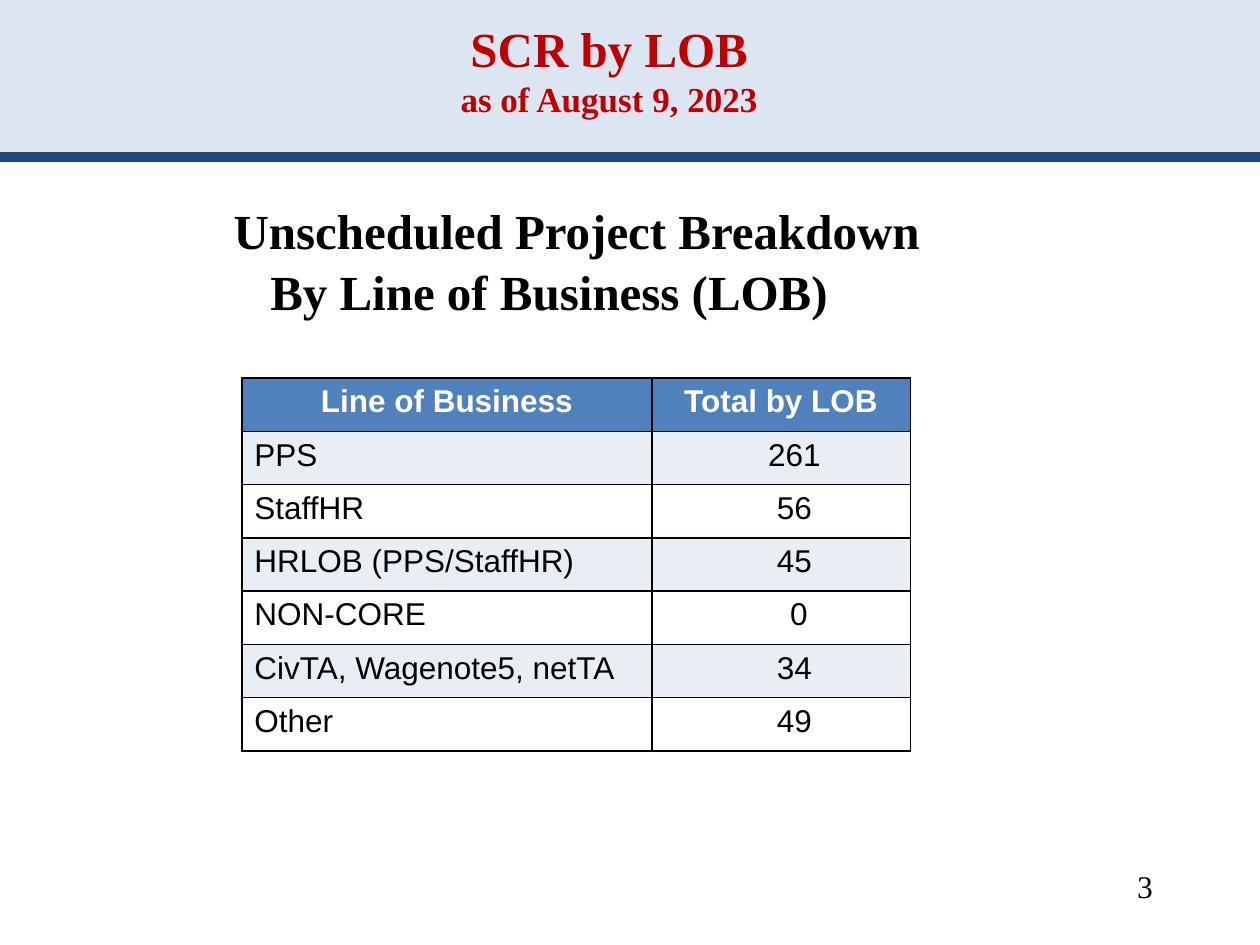
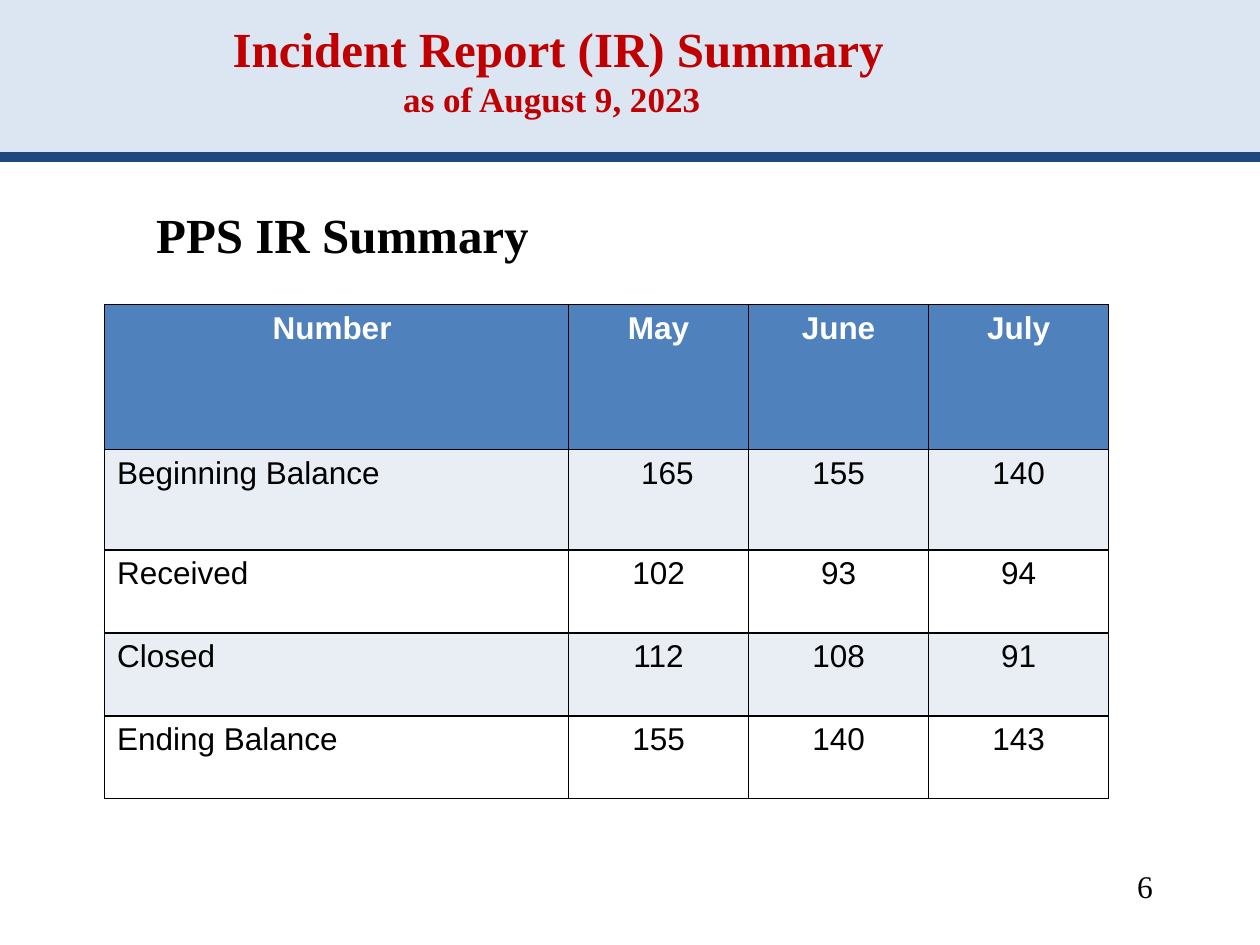
from dataclasses import dataclass

from lxml.etree import SubElement
from pptx import Presentation
from pptx.dml.color import RGBColor
from pptx.enum.shapes import MSO_CONNECTOR, MSO_SHAPE
from pptx.enum.text import MSO_ANCHOR, PP_ALIGN
from pptx.oxml.ns import qn
from pptx.slide import Slide
from pptx.table import _Cell
from pptx.text.text import _Paragraph
from pptx.util import Cm, Pt

PALE = RGBColor(0xDC, 0xE6, 0xF2)
NAVY = RGBColor(0x1F, 0x49, 0x7D)
RED = RGBColor(0xC0, 0x00, 0x00)
BLUE = RGBColor(0x4F, 0x81, 0xBD)
STRIPE = RGBColor(0xE9, 0xED, 0xF4)
WHITE = RGBColor(0xFF, 0xFF, 0xFF)
BLACK = RGBColor(0x00, 0x00, 0x00)

SERIF = "Times New Roman"
SANS = "Arial"
WIDTH, HEIGHT = 25.4, 19.05
PAD = 0.25
NUDGE = 0.18  # one step of sideways shift in a cell


@dataclass(frozen=True)
class Box:
    left: float
    top: float
    width: float
    height: float


@dataclass(frozen=True)
class Line:
    text: str
    size: int = 28
    indent: float = 0
    before: float = 0


@dataclass(frozen=True)
class Grid:
    left: float
    top: float
    cols: tuple[float, ...]
    rows: tuple[float, ...]
    cells: list[tuple[str, ...]]
    nudges: dict[tuple[int, int], int]


@dataclass(frozen=True)
class Page:
    number: int
    title: str
    title_box: Box
    title_indent: float
    heads: list[Line]
    head_box: Box
    grid: Grid


def add_run(para: _Paragraph, text: str, size: int, font: str,
            color: RGBColor, bold: bool) -> None:
    run = para.add_run()
    run.text = text
    run.font.size = Pt(size)
    run.font.name = font
    run.font.bold = bold
    run.font.color.rgb = color


def add_text(slide: Slide, box: Box, lines: list[Line], color: RGBColor = BLACK,
             bold: bool = True, align: PP_ALIGN = PP_ALIGN.LEFT,
             anchor: MSO_ANCHOR = MSO_ANCHOR.TOP) -> None:
    shape = slide.shapes.add_textbox(Cm(box.left), Cm(box.top),
                                     Cm(box.width), Cm(box.height))
    frame = shape.text_frame
    frame.word_wrap = True
    frame.vertical_anchor = anchor
    for i, line in enumerate(lines):
        para = frame.add_paragraph() if i else frame.paragraphs[0]
        para.alignment = align
        para.space_before = Pt(line.before)
        if line.indent:
            para._p.get_or_add_pPr().set("marL", str(Cm(line.indent)))
        add_run(para, line.text, line.size, SERIF, color, bold)


def add_band(slide: Slide) -> None:
    band = slide.shapes.add_shape(MSO_SHAPE.RECTANGLE, 0, 0, Cm(WIDTH), Cm(3.25))
    band.shadow.inherit = False
    band.fill.solid()
    band.fill.fore_color.rgb = PALE
    band.line.fill.background()
    rule = slide.shapes.add_connector(MSO_CONNECTOR.STRAIGHT,
                                      0, Cm(3.17), Cm(WIDTH), Cm(3.17))
    rule.line.color.rgb = NAVY
    rule.line.width = Pt(5.5)
    SubElement(rule._element.spPr, qn("a:effectLst"))


def add_edges(cell: _Cell) -> None:
    props = cell._tc.get_or_add_tcPr()
    for side in ("lnL", "lnR", "lnT", "lnB"):
        edge = SubElement(props, qn(f"a:{side}"), w=str(Pt(1)))
        fill = SubElement(edge, qn("a:solidFill"))
        SubElement(fill, qn("a:srgbClr"), val=str(BLACK))


def fill_cell(cell: _Cell, text: str, row: int, col: int, nudge: int) -> None:
    """Style one cell; a positive nudge moves centred text right, a negative one left."""
    head = row == 0
    add_edges(cell)
    cell.fill.solid()
    cell.fill.fore_color.rgb = BLUE if head else STRIPE if row % 2 else WHITE
    cell.margin_left = Cm(PAD + NUDGE * max(nudge, 0))
    cell.margin_right = Cm(PAD + NUDGE * max(-nudge, 0))
    para = cell.text_frame.paragraphs[0]
    para.alignment = PP_ALIGN.CENTER if head or col else PP_ALIGN.LEFT
    add_run(para, text, 18, SANS, WHITE if head else BLACK, head)


def add_grid(slide: Slide, grid: Grid) -> None:
    table = slide.shapes.add_table(
        len(grid.rows), len(grid.cols), Cm(grid.left), Cm(grid.top),
        Cm(sum(grid.cols)), Cm(sum(grid.rows))).table
    table.horz_banding = False
    for col, width in zip(table.columns, grid.cols):
        col.width = Cm(width)
    for row, height in zip(table.rows, grid.rows):
        row.height = Cm(height)
    for r, texts in enumerate(grid.cells):
        for c, text in enumerate(texts):
            fill_cell(table.cell(r, c), text, r, c, grid.nudges.get((r, c), 0))


def add_page(slide: Slide, page: Page) -> None:
    add_band(slide)
    title = [Line(page.title, indent=page.title_indent),
             Line("as of August 9, 2023", 20)]
    add_text(slide, page.title_box, title, RED,
             align=PP_ALIGN.CENTER, anchor=MSO_ANCHOR.BOTTOM)
    add_text(slide, page.head_box, page.heads)
    add_grid(slide, page.grid)
    add_text(slide, Box(18.21, 17.35, 5.28, 1.27), [Line(str(page.number), 18)],
             bold=False, align=PP_ALIGN.RIGHT)


LOB = Grid(
    4.88, 7.62, (8.26, 5.21), (7.52 / 7,) * 7,
    [("Line of Business", "Total by LOB"),
     ("PPS", "261"),
     ("StaffHR", "56"),
     ("HRLOB (PPS/StaffHR)", "45"),
     ("NON-CORE", "0"),
     ("CivTA, Wagenote5, netTA", "34"),
     ("Other", "49")],
    {(row, 1): 4 if row == 4 else 3 for row in range(1, 7)})

BALANCE = Grid(
    2.11, 6.14, (9.35,) + (3.63,) * 3, (2.92, 2.03) + (1.67,) * 3,
    [("Number", "May", "June", "July"),
     ("Beginning Balance", "165", "155", "140"),
     ("Received", "102", "93", "94"),
     ("Closed", "112", "108", "91"),
     ("Ending Balance", "155", "140", "143")],
    {(0, 0): -1, (1, 1): 2})

PAGES = [
    Page(3, "SCR by LOB", Box(0.43, 0.76, 23.7, 1.78), 0,
         [Line("Unscheduled Project Breakdown", indent=3.19),
          Line("By Line of Business (LOB)", indent=3.93, before=1.5)],
         Box(1.27, 3.91, 22.86, 2.8), LOB),
    Page(6, "Incident Report (IR) Summary", Box(0.43, 0.43, 21.39, 2.11), 0.25,
         [Line("PPS IR Summary")], Box(2.9, 3.99, 19.48, 1.45), BALANCE),
]


def main() -> None:
    deck = Presentation()
    deck.slide_width, deck.slide_height = Cm(WIDTH), Cm(HEIGHT)
    for page in PAGES:
        add_page(deck.slides.add_slide(deck.slide_layouts[6]), page)
    deck.save("out.pptx")


if __name__ == "__main__":
    main()
